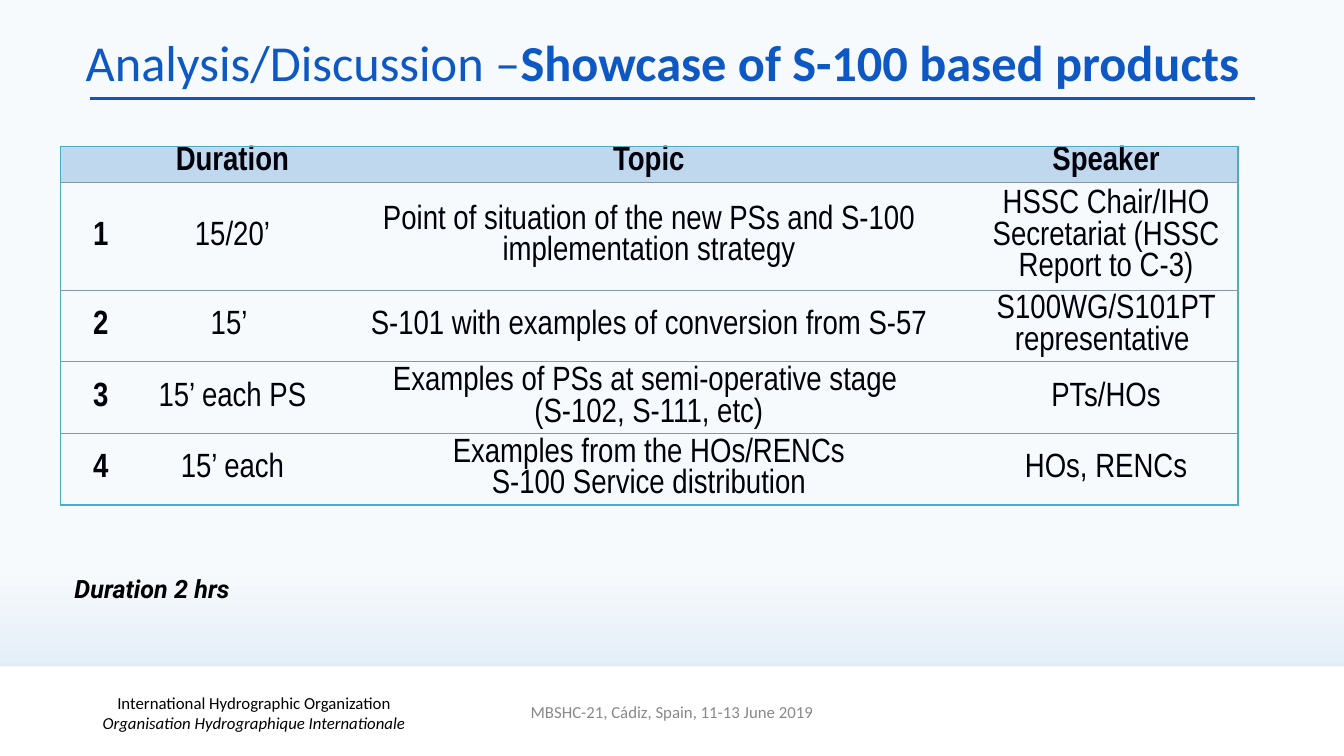
from dataclasses import dataclass

from lxml import etree
from pptx import Presentation
from pptx.dml.color import RGBColor
from pptx.enum.shapes import MSO_CONNECTOR, MSO_SHAPE
from pptx.enum.text import MSO_ANCHOR, PP_ALIGN
from pptx.oxml.ns import qn
from pptx.util import Inches, Pt

LEFT, CENTER = PP_ALIGN.LEFT, PP_ALIGN.CENTER
TOP, MIDDLE = MSO_ANCHOR.TOP, MSO_ANCHOR.MIDDLE
LINE, RECT = MSO_CONNECTOR.STRAIGHT, MSO_SHAPE.RECTANGLE


@dataclass(frozen=True)
class Theme:
    """Colours, fonts and type sizes of the slide."""
    blue: str = "0E58C4"
    teal: str = "4BACC6"
    rule: str = "8497A5"
    head: str = "C0D8ED"
    pale: str = "F7FAFD"
    sky: str = "D0E2F1"
    white: str = "FFFFFF"
    black: str = "000000"
    ink: str = "00000A"
    gray: str = "888888"
    main: str = "Calibri"
    grid: str = "Arial Narrow"
    note: str = "Roboto"
    title: int = 36
    cell: int = 24
    pitch: float = 22.5
    body: int = 18
    foot: int = 12


T = Theme()
WIDE, HIGH = 13.33, 7.5
COLS = [0.8, 1.81, 6.45, 2.62]
ROWS = [0.36, 1.07, 0.71, 0.71, 0.71]
AGENDA = [
    ["", "Duration", "Topic", "Speaker"],
    ["1", "15/20’", "Point of situation of the new PSs and S-100 implementation strategy",
     "HSSC Chair/IHO Secretariat (HSSC Report to C-3)"],
    ["2", "15’ ", "S-101 with examples of conversion from S-57",
     "S100WG/S101PT representative "],
    ["3", "15’ each PS", "Examples of PSs at semi-operative stage \n(S-102, S-111, etc)",
     "PTs/HOs"],
    ["4", "15’ each", "Examples from the HOs/RENCs\nS-100 Service distribution",
     "HOs, RENCs"],
]


def color(code):
    """Turn a hex code into a colour."""
    return RGBColor.from_string(code)


def write(para, text, font=T.main, size=T.foot, tint=T.black, bold=False,
          slant=False, align=LEFT):
    """Add a formatted run to a paragraph."""
    para.alignment = align
    run = para.add_run()
    run.text = text
    face = run.font
    face.name, face.size, face.bold, face.italic = font, Pt(size), bold, slant
    face.color.rgb = color(tint)


def inset(frame, side, edge):
    """Set the inner margins of a text frame or a cell."""
    frame.margin_left = frame.margin_right = Inches(side)
    frame.margin_top = frame.margin_bottom = Inches(edge)


def add_box(slide, box, anchor=MIDDLE, side=0.05):
    """Add a wrapping text box and return its frame."""
    frame = slide.shapes.add_textbox(*map(Inches, box)).text_frame
    frame.word_wrap = True
    frame.vertical_anchor = anchor
    inset(frame, side, 0.05)
    return frame


def edge(cell, spot, name, tint, width=1):
    """Draw or clear one border of a cell."""
    line = etree.Element(qn("a:" + name), w=str(Pt(width)))
    if tint:
        fill = etree.SubElement(line, qn("a:solidFill"))
        etree.SubElement(fill, qn("a:srgbClr"), val=tint)
    else:
        etree.SubElement(line, qn("a:noFill"))
    cell._tc.get_or_add_tcPr().insert(spot, line)


def add_back(slide):
    """Fill the background with a vertical gradient."""
    fill = slide.background.fill
    fill.gradient()
    fill.gradient_angle = 270
    for stop, place, tint in zip(fill.gradient_stops, (0.75, 1), (T.pale, T.sky)):
        stop.position = place
        stop.color.rgb = color(tint)


def add_title(slide, box):
    """Place the title and the rule under it."""
    left, top, wide, high = box
    title = slide.shapes.title
    title.left, title.top, title.width, title.height = map(Inches, box)
    frame = title.text_frame
    frame.word_wrap = True
    frame.vertical_anchor = MIDDLE
    inset(frame, 0.05, 0.05)
    para = frame.paragraphs[0]
    para.line_spacing = 0.9
    look = {"size": T.title, "tint": T.blue}
    write(para, "Analysis/Discussion –", **look)
    write(para, "Showcase of S-100 based products", bold=True, **look)
    low = Inches(top + high - 0.02)
    line = slide.shapes.add_connector(
        LINE, Inches(left + 0.09), low, Inches(left + wide - 0.13), low)
    line.line.color.rgb = color(T.blue)
    line.line.width = Pt(2.25)
    etree.SubElement(line._element.spPr, qn("a:effectLst"))


def add_cell(cell, text, row, col):
    """Fill and frame one cell of the agenda."""
    inset(cell, 0.07, 0)
    cell.vertical_anchor = MIDDLE if row else TOP
    if row:
        cell.fill.background()
    else:
        cell.fill.solid()
        cell.fill.fore_color.rgb = color(T.head)
    last = len(ROWS) - 1
    lines = (
        ("lnL", None if col else T.teal),
        ("lnR", T.teal if col == len(COLS) - 1 else None),
        ("lnT", T.teal if row in (0, last) else T.rule),
        ("lnB", T.teal if row in (last - 1, last) else T.rule),
    )
    for spot, (name, tint) in enumerate(lines):
        edge(cell, spot, name, tint)
    frame = cell.text_frame
    for at, part in enumerate(text.split("\n")):
        para = frame.add_paragraph() if at else frame.paragraphs[0]
        para.line_spacing = Pt(T.pitch)
        if part:
            write(para, part, font=T.grid, size=T.cell, tint=T.ink,
                  bold=row == 0 or col == 0, align=CENTER)


def add_agenda(slide, box):
    """Build the agenda table."""
    table = slide.shapes.add_table(len(ROWS), len(COLS), *map(Inches, box)).table
    table.first_row = table.horz_banding = False
    for col, wide in zip(table.columns, COLS):
        col.width = Inches(wide)
    for row, high in zip(table.rows, ROWS):
        row.height = Inches(high)
    for row, texts in enumerate(AGENDA):
        for col, text in enumerate(texts):
            add_cell(table.cell(row, col), text, row, col)


def add_note(slide, box):
    """Write the total duration."""
    frame = add_box(slide, box, TOP, 0.1)
    write(frame.paragraphs[0], "Duration 2 hrs", font=T.note, size=T.body,
          bold=True, slant=True)


def add_foot(slide, box):
    """Place the white band with the host and the meeting."""
    left, top, wide, high = box
    band = slide.shapes.add_shape(RECT, *map(Inches, box))
    band.shadow.inherit = False
    band.fill.solid()
    band.fill.fore_color.rgb = color(T.white)
    band.line.fill.background()
    host = add_box(slide, (left + 0.27, top + 0.22, 4.5, 0.49))
    write(host.paragraphs[0], "International Hydrographic Organization", align=CENTER)
    write(host.add_paragraph(), "Organisation Hydrographique Internationale",
          slant=True, align=CENTER)
    meet = add_box(slide, (left + (wide - 4.5) / 2, top + 0.3, 4.5, 0.3))
    write(meet.paragraphs[0], "MBSHC-21, Cádiz, Spain, 11-13 June 2019",
          tint=T.gray, align=CENTER)


def main():
    """Build and save the slide."""
    deck = Presentation()
    deck.slide_width, deck.slide_height = Inches(WIDE), Inches(HIGH)
    slide = deck.slides.add_slide(deck.slide_layouts[5])
    add_back(slide)
    add_foot(slide, (0, 6.61, WIDE, HIGH - 6.61))
    add_title(slide, (0.8, 0.3, 11.78, 0.7))
    add_agenda(slide, (0.6, 1.45, sum(COLS), sum(ROWS)))
    add_note(slide, (0.64, 5.64, 4.52, 0.4))
    deck.save("out.pptx")


if __name__ == "__main__":
    main()
